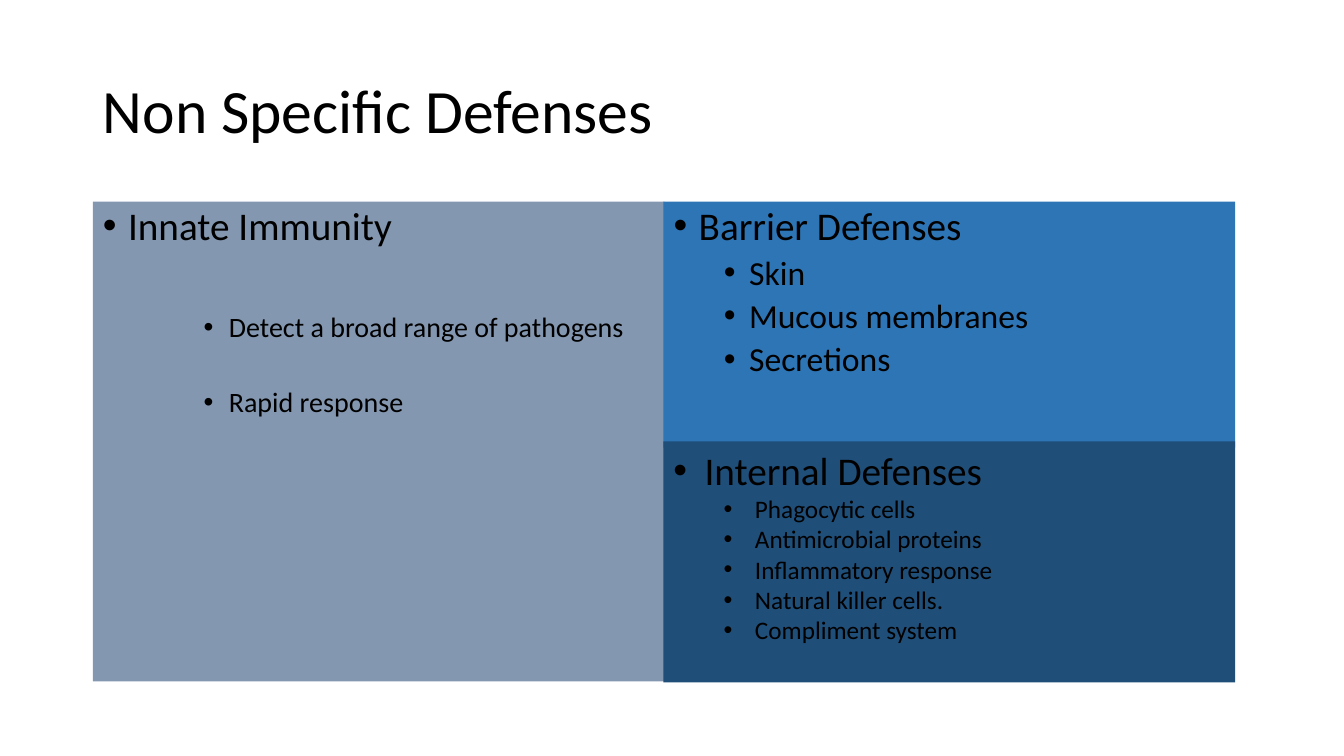
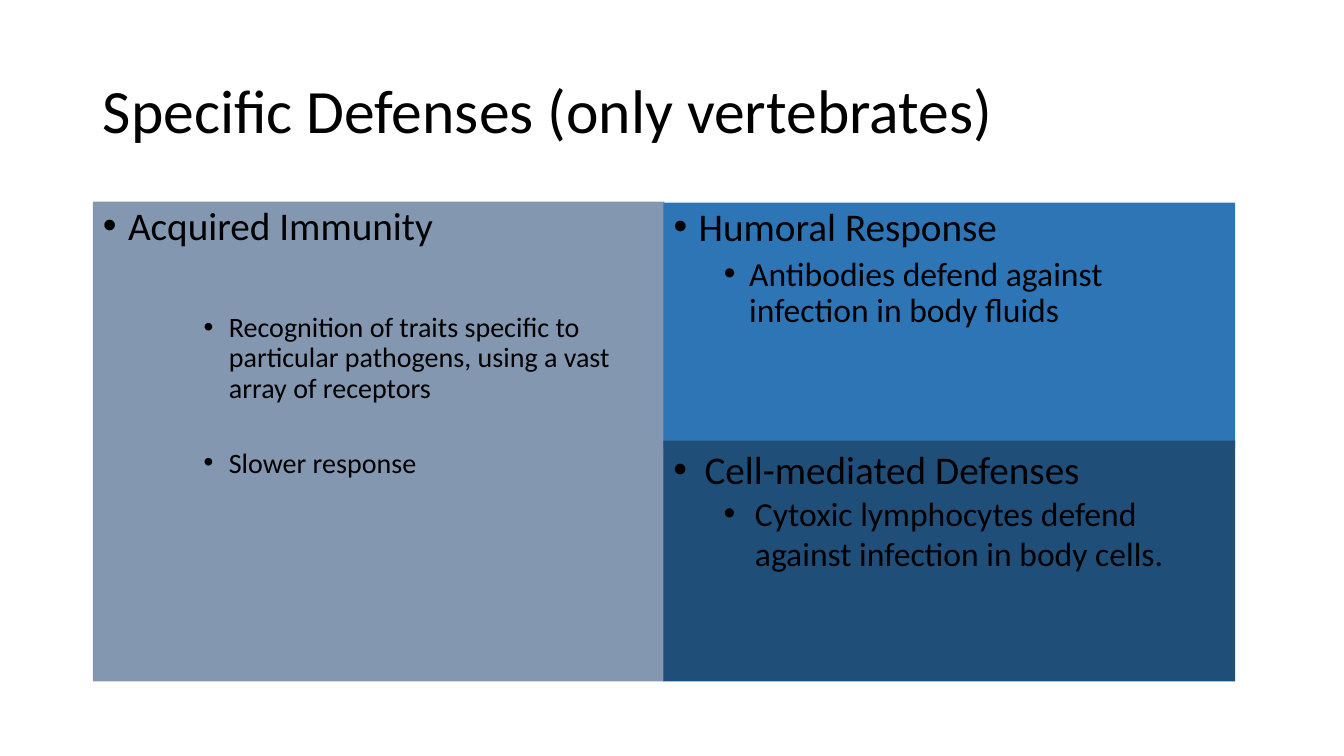
"""Build two slides comparing non specific and specific immune defenses."""
from dataclasses import dataclass

from lxml import etree
from pptx import Presentation
from pptx.dml.color import RGBColor
from pptx.enum import shapes, text
from pptx.oxml import ns
from pptx.util import Inches, Pt

FONT = "Calibri"
BLACK = RGBColor(0x00, 0x00, 0x00)
GREY_BLUE = RGBColor(0x84, 0x97, 0xB0)
MID_BLUE = RGBColor(0x2E, 0x75, 0xB6)
DARK_BLUE = RGBColor(0x1F, 0x4E, 0x79)

LEFT, RIGHT, COLUMN_WIDTH = 0.92, 6.58, 5.67
TITLE_SIZE, HEADING_SIZE = 44, 28
LEVEL_STEP = 0.5


@dataclass(frozen=True)
class PanelStyle:
    left: float
    height: float
    fill: RGBColor
    level: int
    hanging: float
    line_spacing: float
    heading_gap: float
    first_gap: float
    item_gap: float


@dataclass(frozen=True)
class Panel:
    style: PanelStyle
    top: float
    heading: str
    items: tuple[str, ...]
    item_size: int


@dataclass(frozen=True)
class DefenseSlide:
    title: str
    overview: Panel
    upper: Panel
    lower: Panel


OVERVIEW = PanelStyle(LEFT, 4.76, GREY_BLUE, 2, 0.25, 0.9, 10, 46, 32)
UPPER = PanelStyle(RIGHT, 2.44, MID_BLUE, 1, 0.25, 0.9, 10, 5, 5)
LOWER = PanelStyle(RIGHT, 2.39, DARK_BLUE, 1, 0.31, 1.0, 0, 0, 0)

SLIDES = (
    DefenseSlide(
        "Non Specific Defenses",
        Panel(OVERVIEW, 2, "Innate Immunity",
              ("Detect a broad range of pathogens", "Rapid response"), 20),
        Panel(UPPER, 2, "Barrier Defenses",
              ("Skin", "Mucous membranes", "Secretions"), 24),
        Panel(LOWER, 4.38, "Internal Defenses",
              ("Phagocytic cells", "Antimicrobial proteins", "Inflammatory response",
               "Natural killer cells.", "Compliment system"), 18),
    ),
    DefenseSlide(
        "Specific Defenses (only vertebrates)",
        Panel(OVERVIEW, 2, "Acquired Immunity",
              ("Recognition of traits specific to particular pathogens, "
               "using a vast array of receptors", "Slower response"), 20),
        Panel(UPPER, 2.01, "Humoral Response",
              ("Antibodies defend against infection in body fluids",), 24),
        Panel(LOWER, 4.37, "Cell-mediated Defenses",
              ("Cytoxic lymphocytes defend against infection in body cells.",), 24),
    ),
)


def place(shape, left: float, top: float, width: float, height: float) -> None:
    """Move and size a shape, in inches."""
    shape.left, shape.top = Inches(left), Inches(top)
    shape.width, shape.height = Inches(width), Inches(height)


def prepare_frame(frame, anchor: text.MSO_ANCHOR) -> None:
    """Give a text frame fixed, wrapped text at the given anchor."""
    frame.word_wrap = True
    frame.auto_size = text.MSO_AUTO_SIZE.NONE
    frame.vertical_anchor = anchor


def format_paragraph(paragraph, size: int, line_spacing: float, gap: float) -> None:
    """Set alignment, spacing and font of a paragraph."""
    paragraph.alignment = text.PP_ALIGN.LEFT
    paragraph.line_spacing = line_spacing
    paragraph.space_before = Pt(gap)
    for run in paragraph.runs:
        run.font.name = FONT
        run.font.size = Pt(size)
        run.font.color.rgb = BLACK


def add_bullet(paragraph, level: int, hanging: float) -> None:
    """Indent a paragraph by its level and give it a round bullet."""
    paragraph.level = level
    properties = paragraph._p.get_or_add_pPr()
    properties.set("marL", str(Inches(hanging + LEVEL_STEP * level)))
    properties.set("indent", str(Inches(-hanging)))
    etree.SubElement(properties, ns.qn("a:buFont"), typeface="Arial")
    etree.SubElement(properties, ns.qn("a:buChar"), char="•")


def fill_panel(shape, panel: Panel) -> None:
    """Place a panel, colour it and write its heading and items."""
    style = panel.style
    place(shape, style.left, panel.top, COLUMN_WIDTH, style.height)
    shape.fill.solid()
    shape.fill.fore_color.rgb = style.fill
    shape.line.fill.background()
    frame = shape.text_frame
    frame.text = "\n".join((panel.heading, *panel.items))
    prepare_frame(frame, text.MSO_ANCHOR.TOP)
    for index, paragraph in enumerate(frame.paragraphs):
        level, size, gap = style.level, panel.item_size, style.item_gap
        if index == 0:
            level, size, gap = 0, HEADING_SIZE, style.heading_gap
        elif index == 1:
            gap = style.first_gap
        format_paragraph(paragraph, size, style.line_spacing, gap)
        add_bullet(paragraph, level, style.hanging)


def add_defense_slide(presentation, content: DefenseSlide) -> None:
    """Add one slide with a title and three panels."""
    slide = presentation.slides.add_slide(presentation.slide_layouts[3])
    title, overview, upper = slide.placeholders
    place(title, LEFT, 0.4, 11.5, 1.45)
    title.text_frame.text = content.title
    prepare_frame(title.text_frame, text.MSO_ANCHOR.MIDDLE)
    format_paragraph(title.text_frame.paragraphs[0], TITLE_SIZE, 0.9, 0)
    fill_panel(overview, content.overview)
    fill_panel(upper, content.upper)
    lower = slide.shapes.add_shape(shapes.MSO_SHAPE.RECTANGLE, 0, 0, 0, 0)
    lower.shadow.inherit = False
    fill_panel(lower, content.lower)


def main() -> None:
    """Build and save the presentation."""
    presentation = Presentation()
    presentation.slide_width, presentation.slide_height = Inches(13.33), Inches(7.5)
    for content in SLIDES:
        add_defense_slide(presentation, content)
    presentation.save("out.pptx")


if __name__ == "__main__":
    main()
